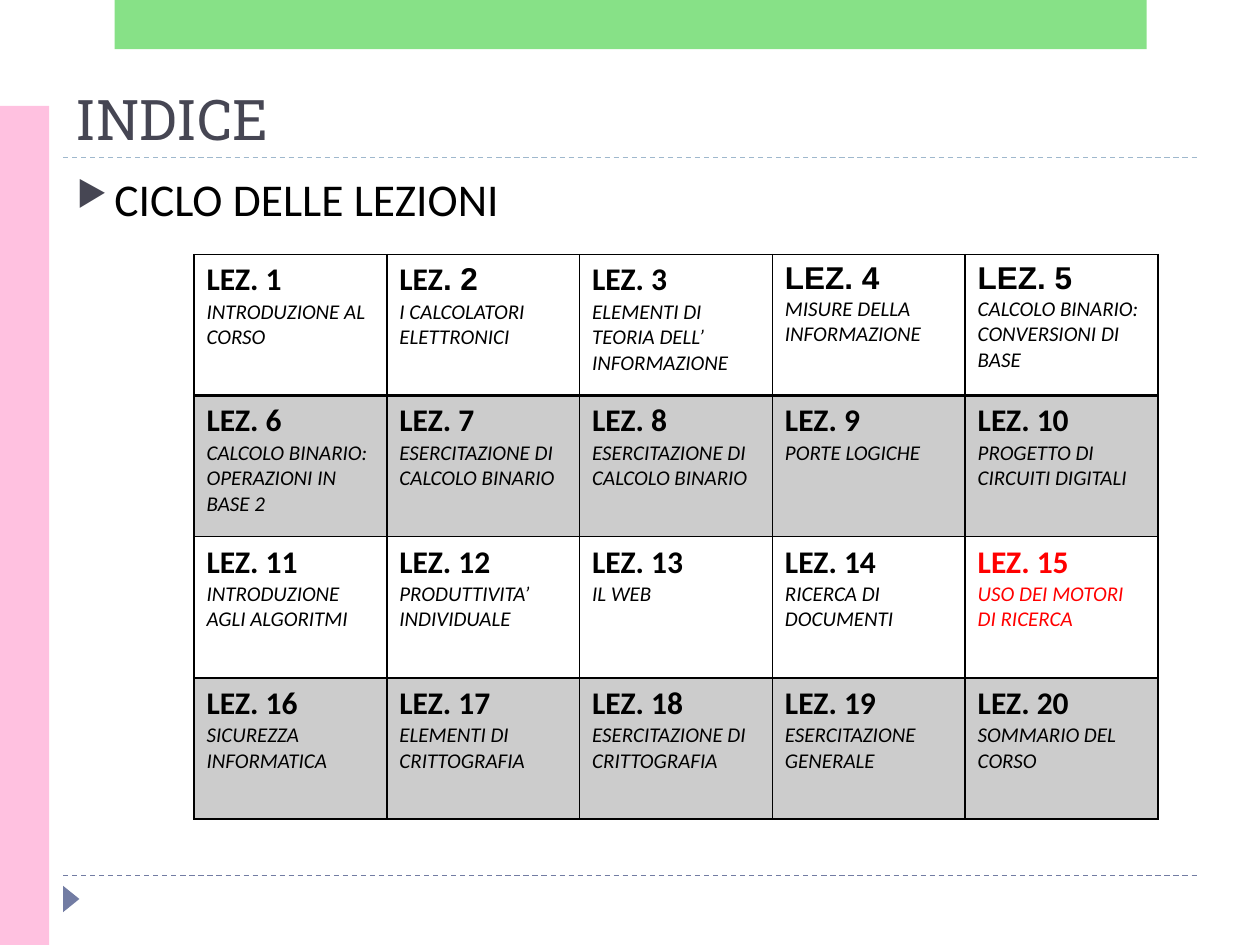
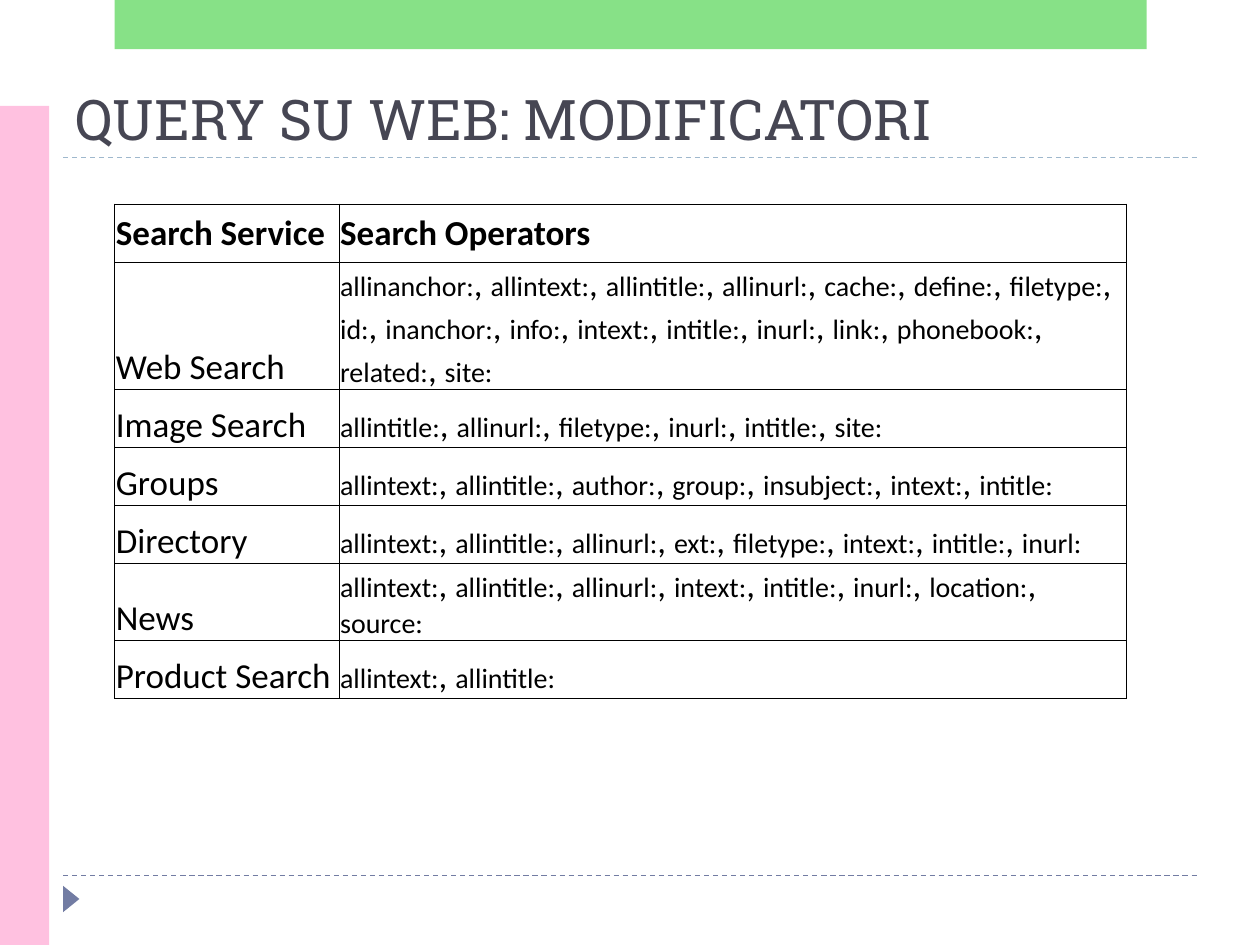
import pptx
import pptx.util
import pptx.dml.color
import pptx.enum.dml
import pptx.enum.shapes
import pptx.enum.text
import pptx.oxml
import pptx.oxml.ns
import lxml.etree

Inches = pptx.util.Inches
Pt = pptx.util.Pt
SHAPES = pptx.enum.shapes.MSO_SHAPE
ANCHORS = pptx.enum.text.MSO_ANCHOR
qn = pptx.oxml.ns.qn

COLORS = {
    "text": "000000",
    "title": "464653",
    "accent": "727CA3",
    "title rule": "9FB8CD",
    "side band": "FFC1E0",
    "top band": "62D862",
    "current lesson": "FF0000",
}

TITLE = {"name": "Roboto Slab", "size": Pt(32)}
BODY = {"name": "Calibri", "size": Pt(26)}
LESSON_NUMBER = {"name": "Calibri", "size": Pt(18), "bold": True}
LESSON_NUMBER_ARIAL = {**LESSON_NUMBER, "name": "Arial"}
LESSON_TOPIC = {"name": "Calibri", "size": Pt(12), "italic": True}
SERVICE = {"name": "Calibri", "size": Pt(20), "bold": False}
SERVICE_HEADING = {**SERVICE, "bold": True}
OPERATOR = {**SERVICE, "size": Pt(16)}

LESSON_COLUMNS = 5
CURRENT_LESSON = 15
ARIAL_LESSONS = (4, 5)
LESSON_TOPICS = [
    "INTRODUZIONE AL CORSO",
    "I CALCOLATORI ELETTRONICI",
    "ELEMENTI DI TEORIA DELL’ INFORMAZIONE",
    "MISURE DELLA INFORMAZIONE",
    "CALCOLO BINARIO: CONVERSIONI DI BASE",
    "CALCOLO BINARIO: OPERAZIONI IN BASE 2",
    "ESERCITAZIONE DI CALCOLO BINARIO",
    "ESERCITAZIONE DI CALCOLO BINARIO",
    "PORTE LOGICHE",
    "PROGETTO DI CIRCUITI DIGITALI",
    "INTRODUZIONE AGLI ALGORITMI",
    "PRODUTTIVITA’ INDIVIDUALE",
    "IL WEB",
    "RICERCA DI DOCUMENTI",
    "USO DEI MOTORI DI RICERCA",
    "SICUREZZA INFORMATICA",
    "ELEMENTI DI CRITTOGRAFIA",
    "ESERCITAZIONE DI CRITTOGRAFIA",
    "ESERCITAZIONE GENERALE",
    "SOMMARIO DEL CORSO",
]

SEARCH_OPERATORS = {
    "Web Search": "allinanchor: allintext: allintitle: allinurl: cache: define: "
                  "filetype: id: inanchor: info: intext: intitle: inurl: link: "
                  "phonebook: related: site:",
    "Image Search": "allintitle: allinurl: filetype: inurl: intitle: site:",
    "Groups": "allintext: allintitle: author: group: insubject: intext: intitle:",
    "Directory": "allintext: allintitle: allinurl: ext: filetype: intext: "
                 "intitle: inurl:",
    "News": "allintext: allintitle: allinurl: intext: intitle: inurl: "
            "location: source:",
    "Product Search": "allintext: allintitle:",
}


def rgb(color):
    return pptx.dml.color.RGBColor.from_string(COLORS[color])


def set_fill(fill, element, color, opacity=100):
    fill.solid()
    fill.fore_color.rgb = rgb(color)
    if opacity < 100:
        color_element = element.find(qn("a:solidFill")).find(qn("a:srgbClr"))
        alpha = lxml.etree.SubElement(color_element, qn("a:alpha"))
        alpha.set("val", str(opacity * 1000))


def add_run(paragraph, text, style, color="text"):
    run = paragraph.add_run()
    run.text = text
    for name, value in style.items():
        setattr(run.font, name, value)
    run.font.color.rgb = rgb(color)


def add_block(slide, kind, position, color, opacity=100):
    shape = slide.shapes.add_shape(kind, *map(Inches, position))
    shape.shadow.inherit = False
    set_fill(shape.fill, shape._element.spPr, color, opacity)
    shape.line.fill.background()
    return shape


def add_rule(slide, top, color):
    rule = slide.shapes.add_connector(
        pptx.enum.shapes.MSO_CONNECTOR.STRAIGHT,
        Inches(0.5), Inches(top), Inches(9.5), Inches(top))
    rule.line.color.rgb = rgb(color)
    rule.line.width = Pt(0.75)
    rule.line.dash_style = pptx.enum.dml.MSO_LINE.DASH
    lxml.etree.SubElement(rule._element.spPr, qn("a:effectLst"))


def add_text(slide, position, text, style, color, anchor):
    frame = slide.shapes.add_textbox(*map(Inches, position)).text_frame
    frame.word_wrap = True
    frame.vertical_anchor = anchor
    paragraph = frame.paragraphs[0]
    add_run(paragraph, text, style, color)
    return paragraph


def add_bullet(paragraph):
    properties = paragraph._p.get_or_add_pPr()
    properties.set("marL", str(Inches(0.3)))
    properties.set("indent", str(Inches(-0.3)))
    color = lxml.etree.SubElement(properties, qn("a:buClr"))
    lxml.etree.SubElement(color, qn("a:srgbClr")).set("val", COLORS["title"])
    lxml.etree.SubElement(properties, qn("a:buSzPct")).set("val", "76000")
    lxml.etree.SubElement(properties, qn("a:buChar")).set("char", "▶")


def add_titled_slide(presentation, title):
    slide = presentation.slides.add_slide(presentation.slide_layouts[6])
    add_rule(slide, 6.95, "accent")
    add_rule(slide, 1.25, "title rule")
    marker = add_block(slide, SHAPES.ISOSCELES_TRIANGLE,
                       (0.46, 7.07, 0.21, 0.13), "accent")
    marker.rotation = 90
    add_block(slide, SHAPES.RECTANGLE, (0, 0.84, 0.39, 6.66), "side band")
    add_block(slide, SHAPES.RECTANGLE, (0.91, 0, 8.19, 0.39), "top band", 76)
    add_text(slide, (0.5, 0.55, 9, 0.7), title, TITLE, "title", ANCHORS.BOTTOM)
    return slide


def add_plain_table(slide, left, top, widths, heights):
    table = slide.shapes.add_table(
        len(heights), len(widths), Inches(left), Inches(top),
        Inches(sum(widths)), Inches(sum(heights))).table
    table.first_row = False
    table.horz_banding = False
    for column, width in zip(table.columns, widths):
        column.width = Inches(width)
    for row, height in zip(table.rows, heights):
        row.height = Inches(height)
    for cell in table.iter_cells():
        cell.fill.background()
    return table


def set_borders(cell, width, **special_widths):
    properties = cell._tc.get_or_add_tcPr()
    for index, side in enumerate(("L", "R", "T", "B")):
        line = lxml.etree.Element(qn("a:ln" + side))
        line.set("w", str(Pt(special_widths.get(side, width))))
        fill = lxml.etree.SubElement(line, qn("a:solidFill"))
        lxml.etree.SubElement(fill, qn("a:srgbClr")).set("val", COLORS["text"])
        properties.insert(index, line)


def fill_lesson(cell, lesson, topic):
    color = "current lesson" if lesson == CURRENT_LESSON else "text"
    heading = cell.text_frame.paragraphs[0]
    if lesson == 2:
        add_run(heading, "LEZ", LESSON_NUMBER)
        add_run(heading, ". 2", LESSON_NUMBER_ARIAL)
    else:
        style = LESSON_NUMBER_ARIAL if lesson in ARIAL_LESSONS else LESSON_NUMBER
        add_run(heading, f"LEZ. {lesson}", style, color)
    add_run(cell.text_frame.add_paragraph(), topic, LESSON_TOPIC, color)


def add_lesson_table(slide):
    row_count = len(LESSON_TOPICS) // LESSON_COLUMNS
    table = add_plain_table(slide, 1.54, 2.02, [1.53] * LESSON_COLUMNS,
                            [1.12] * row_count)
    # The first row is closed by a thicker line
    special_widths = {0: {"B": 2}, 1: {"T": 2}}
    for index, topic in enumerate(LESSON_TOPICS):
        row, column = divmod(index, LESSON_COLUMNS)
        cell = table.cell(row, column)
        if row % 2:
            set_fill(cell.fill, cell._tc.tcPr, "text", 20)
        set_borders(cell, 1, **special_widths.get(row, {}))
        fill_lesson(cell, index + 1, topic)


def add_operator_table(slide):
    heights = [0.46, 0.74] + [0.46] * (len(SEARCH_OPERATORS) - 1)
    table = add_plain_table(slide, 0.91, 1.62, [1.78, 6.25], heights)
    cell_format = {
        "margin_left": Inches(0.01), "margin_top": Inches(0.01),
        "margin_right": Inches(0.01), "margin_bottom": 0,
        "vertical_anchor": ANCHORS.BOTTOM,
    }
    for cell in table.iter_cells():
        for name, value in cell_format.items():
            setattr(cell, name, value)
        set_borders(cell, 0.5)

    # Heading row
    for column, heading in enumerate(("Search Service", "Search Operators")):
        cell = table.cell(0, column)
        cell.vertical_anchor = ANCHORS.MIDDLE
        add_run(cell.text_frame.paragraphs[0], heading, SERVICE_HEADING)

    # One row for each service, with larger commas between operators
    for row, (service, operators) in enumerate(SEARCH_OPERATORS.items(), 1):
        name, listing = (table.cell(row, column).text_frame.paragraphs[0]
                         for column in range(2))
        add_run(name, service, SERVICE)
        for index, operator in enumerate(operators.split()):
            if index:
                add_run(listing, ", ", SERVICE)
            add_run(listing, operator, OPERATOR)


def main():
    presentation = pptx.Presentation()
    presentation.slide_width = Inches(10)
    presentation.slide_height = Inches(7.5)

    # Course index
    slide = add_titled_slide(presentation, "INDICE")
    subtitle = add_text(slide, (0.51, 1.31, 9, 0.79), "CICLO DELLE LEZIONI",
                        BODY, "text", ANCHORS.TOP)
    add_bullet(subtitle)
    add_lesson_table(slide)

    # Search operators
    slide = add_titled_slide(presentation, "QUERY SU WEB: MODIFICATORI")
    add_operator_table(slide)

    presentation.save("out.pptx")


if __name__ == "__main__":
    main()
